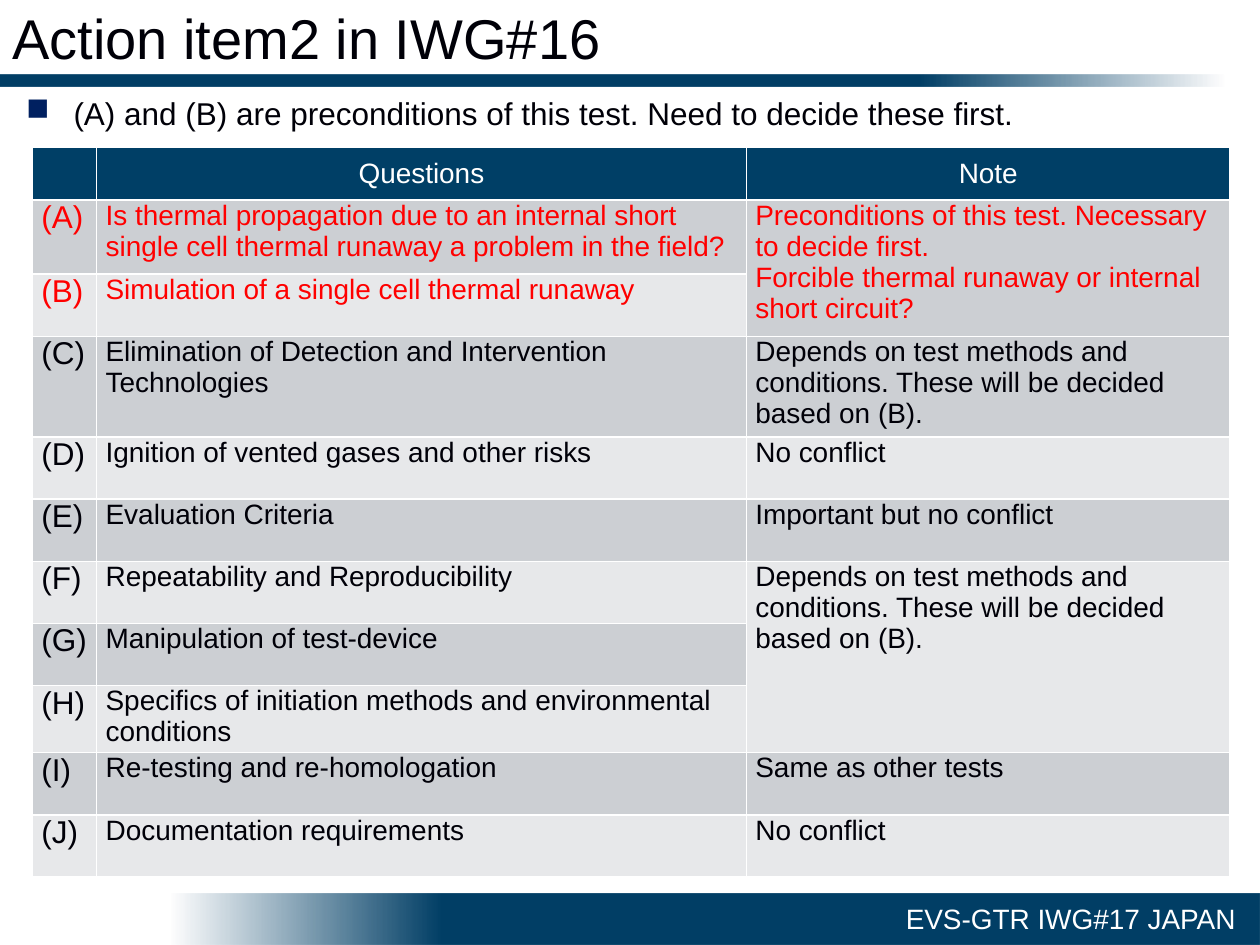
from lxml import etree
from pptx import Presentation
from pptx.dml.color import RGBColor
from pptx.enum import shapes, text
from pptx.oxml import ns
from pptx.util import Pt

FONT = "Arial"
COLORS = {
    "navy": "003F66", "ink": "000008", "white": "FFFFFF", "red": "FF0000",
    "bullet": "002060", "odd": "CCCFD3", "even": "E7E8EA",
}
COLUMN_WIDTHS = [36.7, 371.3, 276.5]
HEADERS = ["", "Questions", "Note"]
HEADER_HEIGHT = 29.8
DEPENDS = "Depends on test methods and conditions. These will be decided based on (B)."

# question, row height, note, rows the note covers, colour
ITEMS = [
    ("Is thermal propagation due to an internal short single cell thermal runaway "
     "a problem in the field?", 42.5,
     "Preconditions of this test. Necessary to decide first.\n"
     "Forcible thermal runaway or internal short circuit?", 2, "red"),
    ("Simulation of a single cell thermal runaway", 35.5, None, 0, "red"),
    ("Elimination of Detection and Intervention Technologies", 53.3, DEPENDS, 1, "ink"),
    ("Ignition of vented gases and other risks", 35.5, "No conflict", 1, "ink"),
    ("Evaluation Criteria", 35.5, "Important but no conflict", 1, "ink"),
    ("Repeatability and Reproducibility", 35.5, DEPENDS, 3, "ink"),
    ("Manipulation of test-device", 35.5, None, 0, "ink"),
    ("Specifics of initiation methods and environmental conditions", 35.5, None, 0, "ink"),
    ("Re-testing and re-homologation", 35.5, "Same as other tests", 1, "ink"),
    ("Documentation requirements", 35.5, "No conflict", 1, "ink"),
]


def rgb(name):
    return RGBColor.from_string(COLORS[name])


def write(frame, words, size, color, align=text.PP_ALIGN.LEFT):
    frame.text = words
    for paragraph in frame.paragraphs:
        paragraph.alignment = align
        font = paragraph.font
        font.name, font.size, font.bold = FONT, Pt(size), False
        font.color.rgb = rgb(color)


def add_label(slide, box, words, size, color, wrap=False, anchor=text.MSO_ANCHOR.TOP):
    frame = slide.shapes.add_textbox(*map(Pt, box)).text_frame
    frame.word_wrap = wrap
    frame.vertical_anchor = anchor
    write(frame, words, size, color)
    return frame


def add_fading_band(slide, box, rotation=0):
    """Navy band that turns transparent over its last quarter."""
    band = slide.shapes.add_shape(shapes.MSO_SHAPE.RECTANGLE, *map(Pt, box))
    band.shadow.inherit = False
    band.rotation = rotation
    band.line.fill.background()
    band.fill.gradient()
    band.fill.gradient_angle = 0
    stops = band.fill._fill._gradFill.find(ns.qn("a:gsLst"))
    for stop in list(stops):
        stops.remove(stop)
    for position, alpha in [(0, 100), (75, 100), (100, 0)]:
        stop = etree.SubElement(stops, ns.qn("a:gs"), pos=str(position * 1000))
        color = etree.SubElement(stop, ns.qn("a:srgbClr"), val=COLORS["navy"])
        etree.SubElement(color, ns.qn("a:alpha"), val=str(alpha * 1000))


def add_header(slide, left, top, width):
    add_fading_band(slide, (left, top + 42.5, 700, 7.2))
    add_label(slide, (left, top, width, 42.5), "Action item2 in IWG#16", 32, "ink",
              wrap=True, anchor=text.MSO_ANCHOR.MIDDLE)


def add_bullet_point(slide, box):
    frame = add_label(slide, box, "(A) and (B) are preconditions of this test. "
                      "Need to decide these first.", 18, "ink")
    properties = frame.paragraphs[0]._p.get_or_add_pPr()
    indent = Pt(27)
    properties.set("marL", str(indent))
    properties.set("indent", str(-indent))
    bullet_color = etree.Element(ns.qn("a:buClr"))
    etree.SubElement(bullet_color, ns.qn("a:srgbClr"), val=COLORS["bullet"])
    bullet = etree.Element(ns.qn("a:buChar"), char="■")
    properties.insert(0, bullet_color)
    properties.insert(1, bullet)


def add_questions_table(slide, left, top):
    heights = [HEADER_HEIGHT] + [item[1] for item in ITEMS]
    table = slide.shapes.add_table(
        len(heights), len(HEADERS), Pt(left), Pt(top),
        Pt(sum(COLUMN_WIDTHS)), Pt(sum(heights))).table
    for column, width in zip(table.columns, COLUMN_WIDTHS):
        column.width = Pt(width)
    for row, height in zip(table.rows, heights):
        row.height = Pt(height)

    def fill_cell(row, column, words, size, color, fill, align=text.PP_ALIGN.LEFT):
        cell = table.cell(row, column)
        cell.margin_left = cell.margin_right = Pt(5.2)
        cell.margin_top = cell.margin_bottom = 0
        cell.fill.solid()
        cell.fill.fore_color.rgb = rgb(fill)
        write(cell.text_frame, words, size, color, align)
        return cell

    for column, header in enumerate(HEADERS):
        cell = fill_cell(0, column, header, 16, "white", "navy", text.PP_ALIGN.CENTER)
        cell.vertical_anchor = text.MSO_ANCHOR.MIDDLE

    for row, (question, _, note, span, color) in enumerate(ITEMS, start=1):
        fill = "odd" if row % 2 else "even"
        fill_cell(row, 0, f"({'ABCDEFGHIJ'[row - 1]})", 18, color, fill)
        fill_cell(row, 1, question, 16, color, fill)
        note_cell = fill_cell(row, 2, note or "", 16, color, fill)
        if span > 1:
            note_cell.merge(table.cell(row + span - 1, 2))


def add_footer(slide, left, top, width, height):
    add_fading_band(slide, (left, top, width, height), rotation=180)
    add_label(slide, (left + 413.3, top + 1.4, 209.5, 26.6),
              "EVS-GTR IWG#17 JAPAN", 16, "white")


def main():
    presentation = Presentation()
    presentation.slide_width, presentation.slide_height = Pt(720), Pt(540)
    slide = presentation.slides.add_slide(presentation.slide_layouts[6])
    add_header(slide, 0, 0, 680)
    add_footer(slide, 97.2, 510.5, 622.8, 29.5)
    add_bullet_point(slide, (7.9, 50.4, 583.9, 29))
    add_questions_table(slide, 18.5, 84.4)
    presentation.save("out.pptx")


if __name__ == "__main__":
    main()
